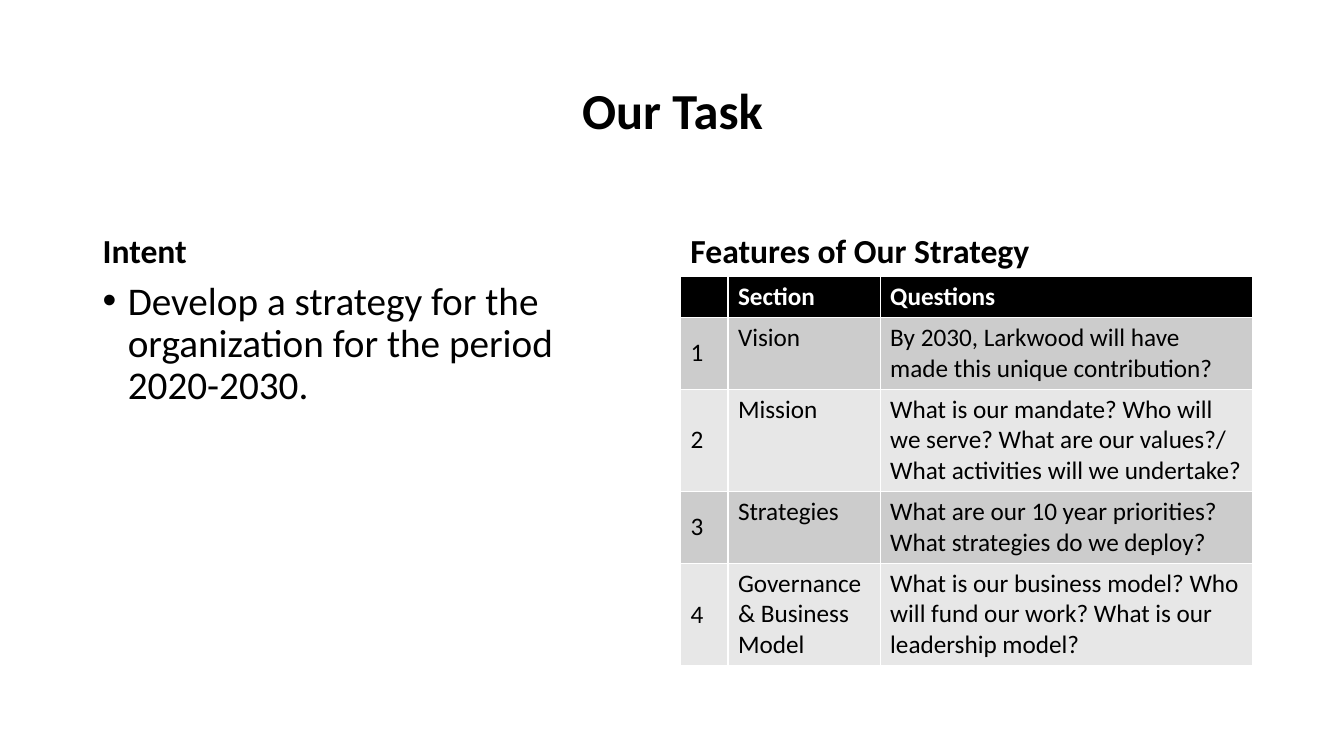
from pptx import Presentation
from pptx.dml.color import RGBColor
from pptx.enum.text import MSO_ANCHOR as Anchor, MSO_AUTO_SIZE as Fit, PP_ALIGN as Align
from pptx.oxml import parse_xml
from pptx.oxml.ns import nsdecls
from pptx.util import Inches, Pt

FONT = "Calibri"
BLACK = RGBColor(0x00, 0x00, 0x00)
WHITE = RGBColor(0xFF, 0xFF, 0xFF)
DARK = RGBColor(0xCC, 0xCC, 0xCC)
LIGHT = RGBColor(0xE7, 0xE7, 0xE7)

# Page grid in inches: (start, length) of each column and row
FULL, LEFT, RIGHT = (0.92, 11.5), (0.92, 5.64), (6.75, 5.67)
TOP, HEAD, BODY = (0.4, 1.45), (1.84, 0.9), (2.74, 4.03)

WIDTHS = (0.47, 1.51, 3.69)
ROW = 0.41
TASKS = (
    ("", "Section", "Questions"),
    ("1", "Vision", "By 2030, Larkwood will have made this unique contribution?"),
    ("2", "Mission", "What is our mandate? Who will we serve? What are our values?/ "
                     "What activities will we undertake?"),
    ("3", "Strategies", "What are our 10 year priorities? What strategies do we deploy?"),
    ("4", "Governance & Business Model",
     "What is our business model? Who will fund our work? What is our leadership model?"),
)


def area(col, row):
    """Left, top, width and height of a grid area."""
    return [Inches(n) for n in (col[0], row[0], col[1], row[1])]


def style(para, size, bold=False, color=BLACK):
    for run in para.runs:
        font = run.font
        font.name, font.size, font.bold = FONT, Pt(size), bold
        font.color.rgb = color


def fill_text(shape, text, size, bold=False, anchor=Anchor.TOP):
    frame = shape.text_frame
    frame.text = text
    frame.word_wrap = True
    frame.auto_size = Fit.NONE
    frame.vertical_anchor = anchor
    para = frame.paragraphs[0]
    para.line_spacing = 0.9
    style(para, size, bold)
    return para


def add_title(slide, text):
    title = slide.shapes.title
    title.left, title.top, title.width, title.height = area(FULL, TOP)
    fill_text(title, text, 36, True, Anchor.MIDDLE).alignment = Align.CENTER


def add_text(slide, col, row, text, size, bold=False, anchor=Anchor.TOP):
    box = slide.shapes.add_textbox(*area(col, row))
    para = fill_text(box, text, size, bold, anchor)
    para.space_before = Pt(10)
    return para


def add_bullet(para):
    props = para._p.get_or_add_pPr()
    props.set("marL", str(Inches(0.25)))
    props.set("indent", str(-Inches(0.25)))
    props.append(parse_xml(f'<a:buFont {nsdecls("a")} typeface="Arial"/>'))
    props.append(parse_xml(f'<a:buChar {nsdecls("a")} char="•"/>'))


def add_grid(slide, data):
    place = area(RIGHT, (BODY[0], ROW * len(data)))
    table = slide.shapes.add_table(len(data), len(WIDTHS), *place).table
    for col, width in zip(table.columns, WIDTHS):
        col.width = Inches(width)
    for r, row in enumerate(data):
        head = r == 0
        shade = BLACK if head else DARK if r % 2 else LIGHT
        for c, text in enumerate(row):
            cell = table.cell(r, c)
            cell.text = text
            cell.fill.solid()
            cell.fill.fore_color.rgb = shade
            if c == 0 and not head:
                cell.vertical_anchor = Anchor.MIDDLE
            style(cell.text_frame.paragraphs[0], 18, head, WHITE if head else BLACK)


def main():
    deck = Presentation()
    deck.slide_width, deck.slide_height = Inches(13.33), Inches(7.5)
    slide = deck.slides.add_slide(deck.slide_layouts.get_by_name("Title Only"))
    add_title(slide, "Our Task")
    add_text(slide, LEFT, HEAD, "Intent", 24, True, Anchor.BOTTOM)
    add_bullet(add_text(slide, LEFT, BODY, "Develop a strategy for the organization "
                                           "for the period 2020-2030.", 28))
    add_text(slide, RIGHT, HEAD, "Features of Our Strategy", 24, True, Anchor.BOTTOM)
    add_grid(slide, TASKS)
    deck.save("out.pptx")


if __name__ == "__main__":
    main()
